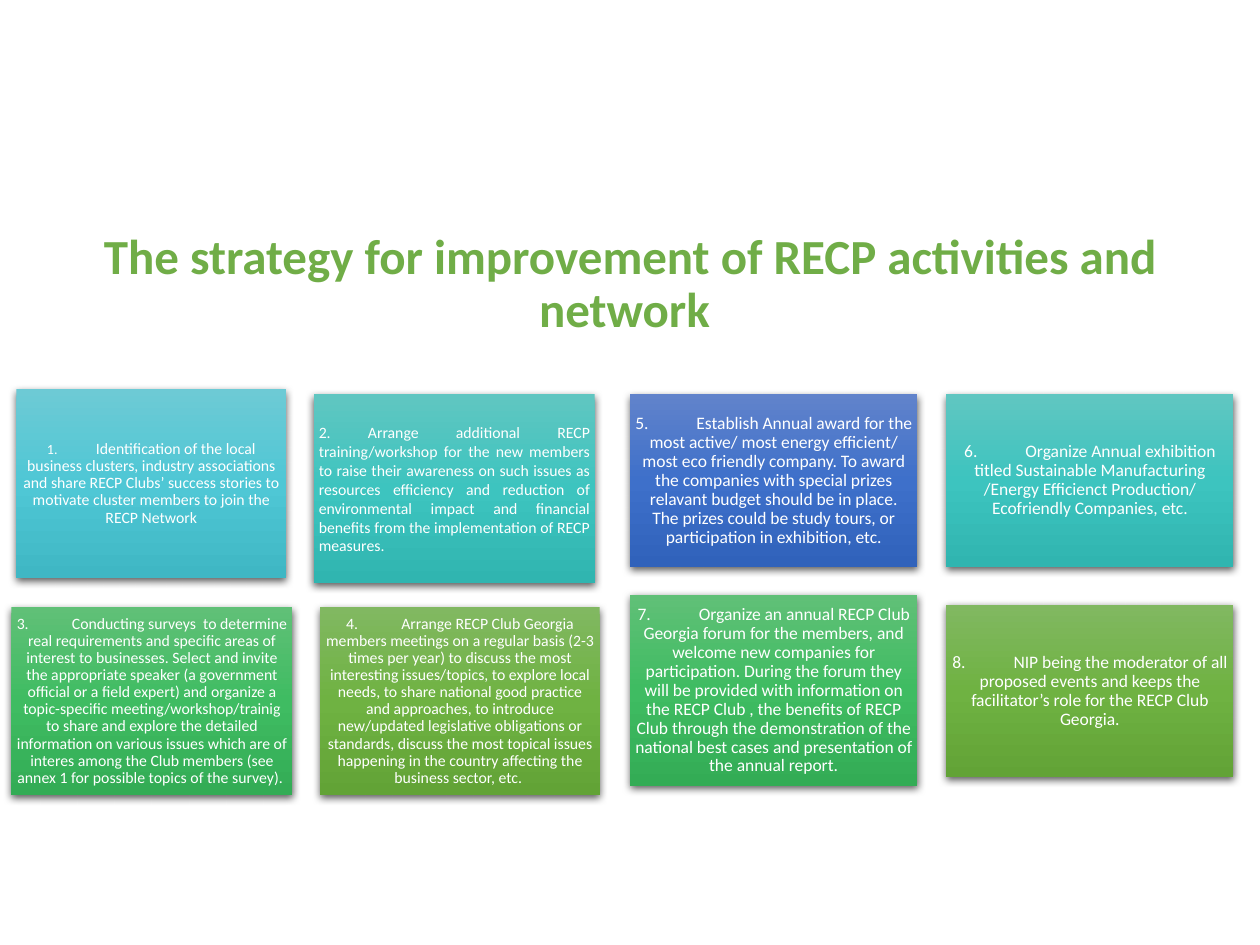
from lxml.etree import SubElement
from pptx import Presentation
from pptx.dml.color import RGBColor
from pptx.enum.shapes import MSO_SHAPE as Shape
from pptx.enum.text import MSO_ANCHOR as Anchor, PP_ALIGN as Align
from pptx.oxml.ns import qn
from pptx.util import Inches, Pt

WHITE = RGBColor(0xFF, 0xFF, 0xFF)
BLACK = RGBColor(0x00, 0x00, 0x00)
TITLE_GREEN = RGBColor(0x70, 0xAD, 0x47)
CYAN = [RGBColor.from_string(c) for c in ("6DCAD5", "4FC7D5", "3FB7C4")]
TEAL = [RGBColor.from_string(c) for c in ("60C6C1", "3DC4BF", "30B5B0")]
GREEN = [RGBColor.from_string(c) for c in ("60C077", "3FBC62", "33AC55")]
OLIVE = [RGBColor.from_string(c) for c in ("81B861", "6FB242", "62A336")]
BLUE = [RGBColor.from_string(c) for c in ("6183CB", "3E70CA", "3062BB")]

TITLE = "The strategy for improvement of RECP activities and network "
MEMBER_STEPS = [
    ((0.13, 3.09, 2.14, 1.5), CYAN, "1.",
     "Identification of the local business clusters, industry associations and share RECP Clubs’ "
     "success stories to motivate cluster members to join the RECP Network"),
    ((2.49, 3.13, 2.23, 1.5), TEAL, "2.",
     "Arrange additional RECP training/workshop for the new members to raise their awareness on "
     "such issues as resources efficiency and reduction of environmental impact and financial "
     "benefits from the implementation of RECP measures. "),
    ((0.09, 4.82, 2.23, 1.49), GREEN, "3.",
     "Conducting surveys  to determine real requirements and specific areas of interest to "
     "businesses. Select and invite the appropriate speaker (a government official or a field "
     "expert) and organize a topic-specific meeting/workshop/trainig to share and explore the "
     "detailed information on various issues which are of interes among the Club members (see "
     "annex 1 for possible topics of the survey). "),
    ((2.54, 4.82, 2.22, 1.49), OLIVE, "4.",
     "Arrange RECP Club Georgia members meetings on a regular basis (2-3 times per year) to "
     "discuss the most interesting issues/topics, to explore local needs, to share national good "
     "practice and approaches, to introduce new/updated legislative obligations or standards, "
     "discuss the most topical issues happening in the country affecting the business sector, etc. "),
]
EVENT_STEPS = [
    ((5, 3.13, 2.28, 1.37), BLUE, "5.",
     "Establish Annual award for the most active/ most energy efficient/ most eco friendly "
     "company. To award the companies with special prizes relavant budget should be in place. "
     "The prizes could be study tours, or participation in exhibition, etc."),
    ((7.51, 3.13, 2.28, 1.37), TEAL, "6.",
     "Organize Annual exhibition titled Sustainable Manufacturing /Energy Efficienct Production/ "
     "Ecofriendly Companies, etc."),
    ((5, 4.72, 2.28, 1.52), GREEN, "7.",
     "Organize an annual RECP Club Georgia forum for the members, and welcome new companies for "
     "participation. During the forum they will be provided with information on the RECP Club , "
     "the benefits of RECP Club through the demonstration of the national best cases and "
     "presentation of the annual report."),
    ((7.51, 4.8, 2.28, 1.37), OLIVE, "8.",
     "NIP being the moderator of all proposed events and keeps the facilitator’s role for the "
     "RECP Club Georgia."),
]


class StrategySlide:
    """Holds the style and the current slide, and draws each kind of element."""

    font_name = "Calibri"
    line_spacing = 0.9
    tab_per_point = 0.0486

    def __init__(self, presentation):
        self.slide = presentation.slides.add_slide(presentation.slide_layouts[5])

    def style(self, font, size, color, bold=False):
        font.name = self.font_name
        font.size = Pt(size)
        font.color.rgb = color
        font.bold = bold

    def title(self, text, box):
        title = self.slide.shapes.title
        title.left, title.top, title.width, title.height = map(Inches, box)
        title.text_frame.text = text
        title.text_frame.word_wrap = True
        title.text_frame.vertical_anchor = Anchor.MIDDLE
        paragraph = title.text_frame.paragraphs[0]
        paragraph.alignment = Align.CENTER
        paragraph.line_spacing = self.line_spacing
        self.style(paragraph.font, 28, TITLE_GREEN, bold=True)

    def gradient(self, shape, colors):
        shape.fill.gradient()
        shape.fill.gradient_angle = 270
        stops = shape.fill._xPr.find(qn("a:gradFill")).find(qn("a:gsLst"))
        for stop in list(stops):
            stops.remove(stop)
        for position, color in zip((0, 50000, 100000), colors):
            stop = SubElement(stops, qn("a:gs"), pos=str(position))
            SubElement(stop, qn("a:srgbClr"), val=str(color))

    def shadow(self, shape):
        shape.shadow.inherit = False
        effects = shape._element.spPr.find(qn("a:effectLst"))
        shadow = SubElement(effects, qn("a:outerShdw"), blurRad=str(Pt(4.5)), dist=str(Pt(1.5)),
                            dir="5400000", algn="ctr", rotWithShape="0")
        color = SubElement(shadow, qn("a:srgbClr"), val=str(BLACK))
        SubElement(color, qn("a:alpha"), val="63000")

    def card(self, box, colors, inset=0.04):
        shape = self.slide.shapes.add_shape(Shape.RECTANGLE, *map(Inches, box))
        shape.line.fill.background()
        self.gradient(shape, colors)
        self.shadow(shape)
        frame = shape.text_frame
        frame.word_wrap = True
        frame.vertical_anchor = Anchor.MIDDLE
        frame.margin_left = frame.margin_right = Inches(inset)
        frame.margin_top = frame.margin_bottom = Inches(inset)
        return frame.paragraphs[0]

    def step(self, box, colors, number, text, size, number_size=None, inset=0.04):
        number_size = number_size or size
        paragraph = self.card(box, colors, inset)
        paragraph.alignment = Align.CENTER
        paragraph.line_spacing = self.line_spacing
        tab_width = Inches(self.tab_per_point * number_size)
        paragraph._p.get_or_add_pPr().set("defTabSz", str(tab_width))
        for words, points in ((f"{number}\t", number_size), (text, size)):
            run = paragraph.add_run()
            run.text = words
            self.style(run.font, points, WHITE)

    def justified_step(self, box, colors, number, text, size):
        paragraph = self.card(box, colors)
        paragraph.text = f"{number} {text}"
        paragraph.alignment = Align.JUSTIFY
        self.style(paragraph.font, size, WHITE)


def main():
    presentation = Presentation()
    presentation.slide_width, presentation.slide_height = Inches(10), Inches(7.5)
    strategy = StrategySlide(presentation)
    strategy.title(TITLE, (0.69, 1.61, 8.62, 1.3))
    clusters, training, *meetings = MEMBER_STEPS
    strategy.step(*clusters, size=9, number_size=8, inset=0.05)
    strategy.justified_step(*training, size=9)
    for step in meetings:
        strategy.step(*step, size=9)
    for step in EVENT_STEPS:
        strategy.step(*step, size=10)
    presentation.save("out.pptx")


if __name__ == "__main__":
    main()
